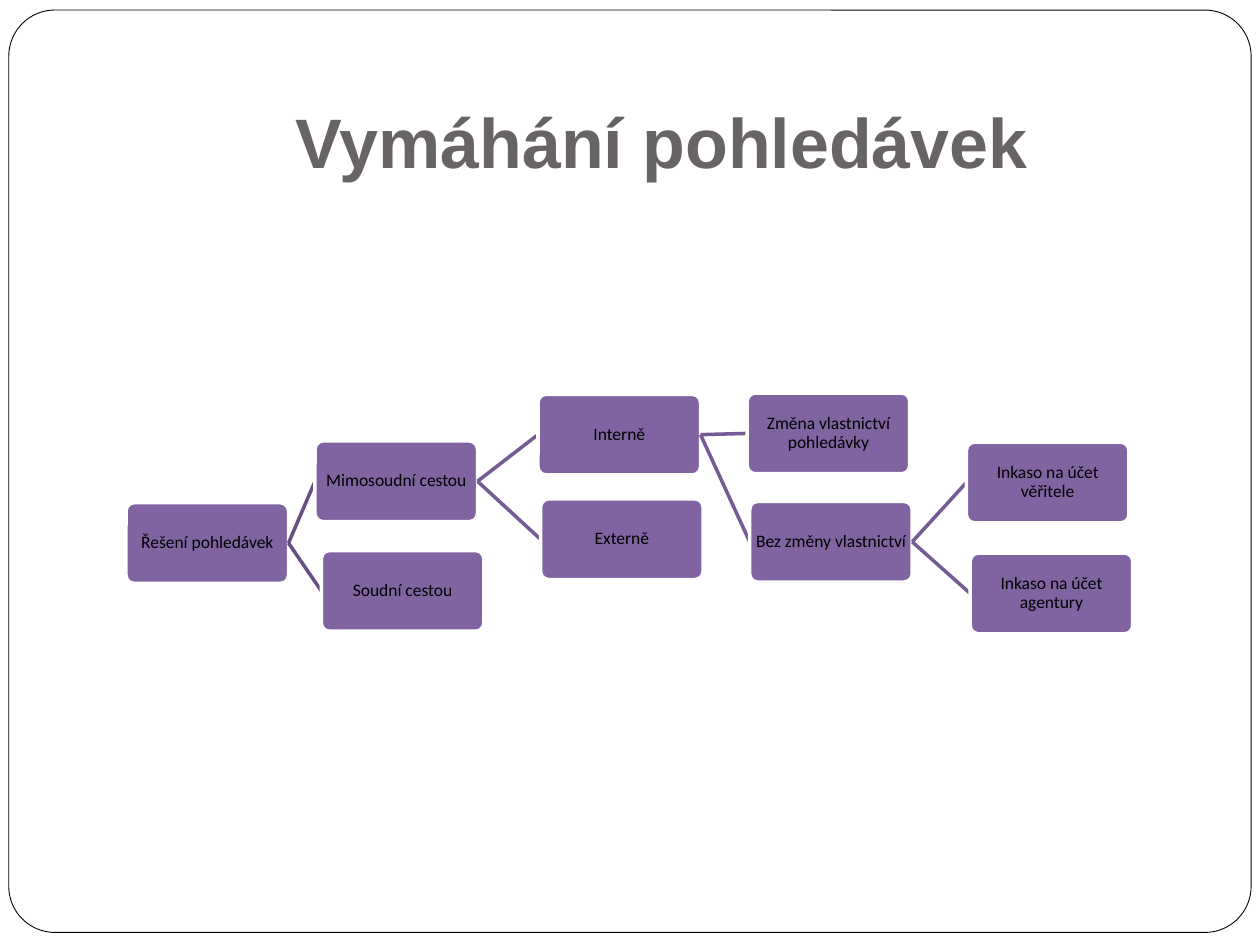
from dataclasses import dataclass

from lxml import etree
from pptx import Presentation
from pptx.dml.color import RGBColor
from pptx.enum.shapes import MSO_CONNECTOR, MSO_SHAPE
from pptx.enum.text import MSO_ANCHOR, PP_ALIGN
from pptx.oxml.ns import qn
from pptx.util import Inches, Pt

ROUNDED = MSO_SHAPE.ROUNDED_RECTANGLE
STRAIGHT = MSO_CONNECTOR.STRAIGHT
CENTER = PP_ALIGN.CENTER
MIDDLE = MSO_ANCHOR.MIDDLE
BOTTOM = MSO_ANCHOR.BOTTOM

COLORS = {
    "white": "FFFFFF",
    "black": "000000",
    "title": "696464",
    "node": "8064A2",
    "branch_1": "675082",
    "branch": "745B93",
}
NODE_W, NODE_H = 1.29, 0.64


@dataclass(frozen=True)
class Node:
    text: str
    left: float
    top: float
    children: tuple["Node", ...] = ()

    @property
    def middle(self) -> float:
        return self.top + NODE_H / 2


TREE = Node("Řešení pohledávek", 1, 3.99, (
    Node("Mimosoudní cestou", 2.5, 3.5, (
        Node("Interně", 4.27, 3.13, (
            Node("Změna vlastnictví pohledávky", 5.93, 3.12),
            Node("Bez změny vlastnictví", 5.95, 3.98, (
                Node("Inkaso na účet věřitele", 7.67, 3.51),
                Node("Inkaso na účet agentury", 7.7, 4.39),
            )),
        )),
        Node("Externě", 4.29, 3.96),
    )),
    Node("Soudní cestou", 2.55, 4.37),
))


def rgb(name: str) -> RGBColor:
    return RGBColor.from_string(COLORS[name])


def add_rounded(slide, left: float, top: float, width: float, height: float,
                radius: float, fill: str, line: str, line_width: float):
    sp = slide.shapes.add_shape(ROUNDED, Inches(left), Inches(top), Inches(width), Inches(height))
    sp.adjustments[0] = radius
    sp.shadow.inherit = False
    sp.fill.solid()
    sp.fill.fore_color.rgb = rgb(fill)
    sp.line.color.rgb = rgb(line)
    sp.line.width = Pt(line_width)
    return sp


def add_title(slide, text: str) -> None:
    tf = slide.shapes.add_textbox(Inches(1), Inches(0.3), Inches(8.5), Inches(1.25)).text_frame
    tf.word_wrap = True
    tf.vertical_anchor = BOTTOM
    tf.margin_bottom = Inches(0.1)
    p = tf.paragraphs[0]
    p.text = text
    p.alignment = CENTER
    p.font.name = "Arial"
    p.font.size = Pt(40)
    p.font.bold = True
    p.font.color.rgb = rgb("title")


def add_node(slide, node: Node) -> None:
    sp = add_rounded(slide, node.left, node.top, NODE_W, NODE_H, 0.1, "node", "white", 2)
    tf = sp.text_frame
    tf.word_wrap = True
    tf.vertical_anchor = MIDDLE
    tf.margin_left = tf.margin_right = Inches(0.02)
    tf.margin_top = tf.margin_bottom = Inches(0.02)
    p = tf.paragraphs[0]
    p.text = node.text
    p.alignment = CENTER
    p.line_spacing = 0.9
    p.font.name = "Calibri"
    p.font.size = Pt(10)
    p.font.color.rgb = rgb("black")


def add_branch(slide, parent: Node, child: Node, color: str) -> None:
    cxn = slide.shapes.add_connector(
        STRAIGHT, Inches(parent.left + NODE_W), Inches(parent.middle),
        Inches(child.left), Inches(child.middle))
    cxn.line.color.rgb = rgb(color)
    cxn.line.width = Pt(2)
    etree.SubElement(cxn._element.spPr, qn("a:effectLst"))


def add_tree(slide, node: Node, color: str = "branch_1") -> None:
    add_node(slide, node)
    for child in node.children:
        add_branch(slide, node, child, color)
        add_tree(slide, child, "branch")


def main() -> None:
    prs = Presentation()
    prs.slide_width, prs.slide_height = Inches(10), Inches(7.5)
    slide = prs.slides.add_slide(prs.slide_layouts[6])
    add_rounded(slide, 0.07, 0.08, 9.86, 7.32, 0.05, "white", "black", 0.5)
    add_title(slide, "Vymáhání pohledávek")
    add_tree(slide, TREE)
    prs.save("out.pptx")


if __name__ == "__main__":
    main()
